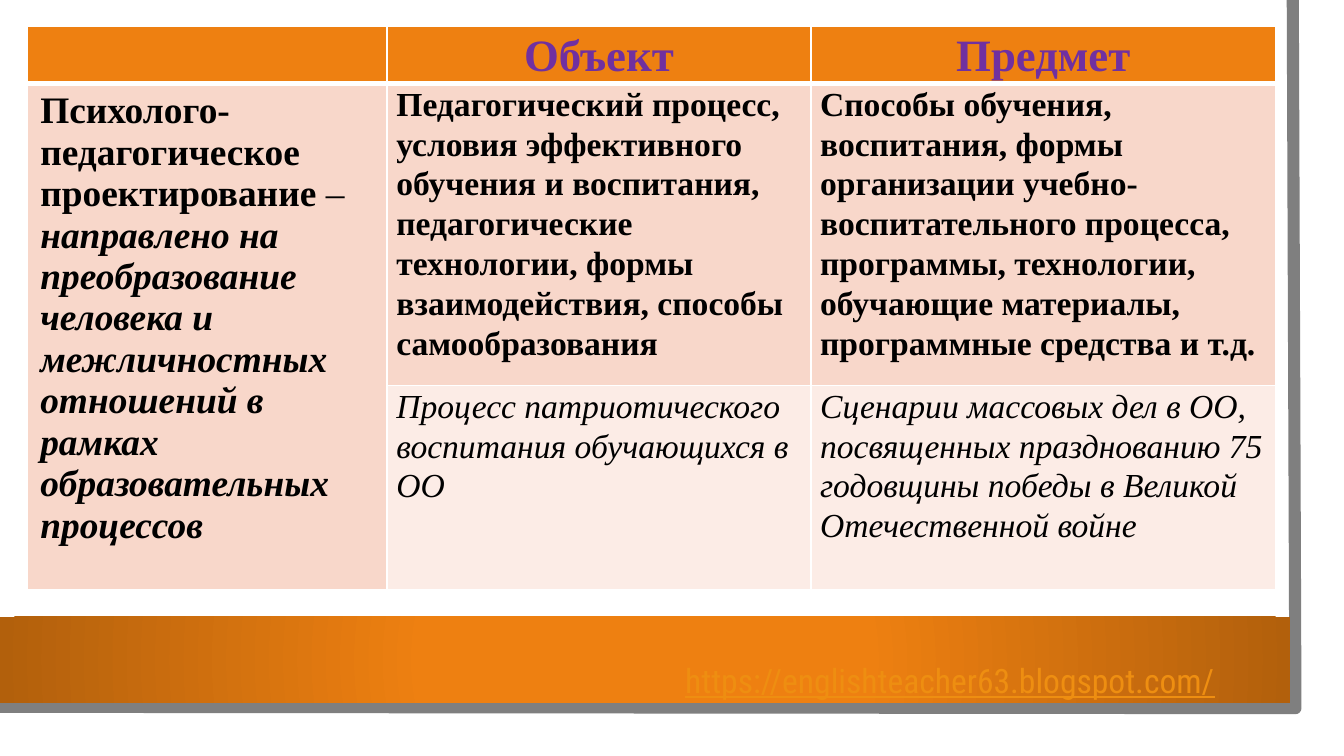
from pptx import Presentation
from pptx.dml.color import RGBColor
from pptx.enum.shapes import MSO_SHAPE as Shapes
from pptx.enum.text import MSO_ANCHOR as Anchor, PP_ALIGN as Align
from pptx.oxml import parse_xml
from pptx.util import Pt

COLORS = {
    "frame": "7F7F7F", "orange": "EE8011", "brown": "B2600C", "link": "EE8E11",
    "heading": "7030A0", "text": "000000", "border": "FFFFFF",
    "band_dark": "F8D7CA", "band_light": "FCECE6",
}
NS = 'xmlns:a="http://schemas.openxmlformats.org/drawingml/2006/main"'
SERIF = "Times New Roman"


def add_span(para, text, color, **formats):
    span = para.add_run()
    span.text = text
    span.font.color.rgb = RGBColor.from_string(COLORS[color])
    for name, value in formats.items():
        setattr(span.font, name, value)


def set_borders(cell, widths):
    """Draw the left, right, top and bottom edges with the given widths in points."""
    properties = cell._tc.get_or_add_tcPr()
    for index, (side, width) in enumerate(zip("LRTB", widths)):
        properties.insert(index, parse_xml(
            f'<a:ln{side} {NS} w="{Pt(width)}"><a:solidFill>'
            f'<a:srgbClr val="{COLORS["border"]}"/></a:solidFill></a:ln{side}>'))


deck = Presentation()
deck.slide_width, deck.slide_height = Pt(720), Pt(405)
page = deck.slides.add_slide(deck.slide_layouts[6])

# Grey frame along the right and bottom edges
outline = page.shapes.build_freeform(Pt(692.6), Pt(0))
outline.add_line_segments([(Pt(694), Pt(379.4)), (Pt(-1.4), Pt(378.7))], close=False)
frame = outline.convert_to_shape()
frame.shadow.inherit = False
frame.fill.background()
frame.line.color.rgb = RGBColor.from_string(COLORS["frame"])
frame.line.width = Pt(6.5)

# Orange band with a radial gradient
band = page.shapes.add_shape(Shapes.RECTANGLE, Pt(0), Pt(330.5), Pt(691), Pt(46))
band.shadow.inherit = False
band.line.fill.background()
stops = "".join(
    f'<a:gs pos="{position * 1000}"><a:srgbClr val="{COLORS[color]}"/></a:gs>'
    for position, color in [(0, "orange"), (34, "orange"), (100, "brown")])
band._element.spPr.insert(2, parse_xml(
    f'<a:gradFill {NS} rotWithShape="1"><a:gsLst>{stops}</a:gsLst><a:path path="circle">'
    '<a:fillToRect l="50000" t="50000" r="50000" b="50000"/></a:path></a:gradFill>'))

# Web address
address = page.shapes.add_textbox(Pt(360), Pt(350), Pt(314), Pt(29)).text_frame
address.word_wrap = True
add_span(address.paragraphs[0], "https://englishteacher63.blogspot.com/", "link",
         size=Pt(18), name="Roboto Condensed", underline=True)

# Table: each cell holds spans of (text, bold, italic)
rows = [
    [[], [("Объект", True, False)], [("Предмет", True, False)]],
    [[("Психолого-педагогическое проектирование", True, False),
      (" – ", False, False),
      ("направлено на преобразование человека и межличностных отношений "
       "в рамках образовательных процессов", True, True)],
     [("Педагогический процесс, условия эффективного обучения и воспитания, "
       "педагогические технологии, формы взаимодействия, способы самообразования",
       True, False)],
     [("Способы обучения, воспитания, формы организации учебно-воспитательного "
       "процесса, программы, технологии, обучающие материалы, программные "
       "средства и т.д.", True, False)]],
    [[],
     [("Процесс патриотического воспитания обучающихся в ОО", False, True)],
     [("Сценарии массовых дел в ОО, посвященных празднованию 75 годовщины "
       "победы в Великой Отечественной войне", False, True)]],
]
widths, heights = [193, 227, 249], [30, 149, 102]
fills = ["orange", "band_dark", "band_light"]
table = page.shapes.add_table(3, 3, Pt(14.4), Pt(14), Pt(sum(widths)), Pt(sum(heights))).table
for column, width in zip(table.columns, widths):
    column.width = Pt(width)
for row, height in zip(table.rows, heights):
    row.height = Pt(height)
table.cell(1, 0).merge(table.cell(2, 0))

for r, row in enumerate(rows):
    for c, spans in enumerate(row):
        cell = table.cell(r, c)
        cell.fill.solid()
        cell.fill.fore_color.rgb = RGBColor.from_string(COLORS[fills[r]])
        set_borders(cell, [1, 1, 3 if r == 1 else 1, 3 if r == 0 else 1])
        para = cell.text_frame.paragraphs[0]
        if c > 0:
            cell.margin_left = cell.margin_right = Pt(5)
            cell.margin_top = cell.margin_bottom = Pt(0)
            para.line_spacing = 1.07
        if r == 0:
            cell.vertical_anchor = Anchor.MIDDLE
            para.alignment = Align.CENTER
        size = 24 if r == 0 else 20 if c == 0 else 18
        for text, bold, italic in spans:
            add_span(para, text, "text" if r else "heading",
                     size=Pt(size), name=SERIF, bold=bold, italic=italic)

deck.save("out.pptx")
